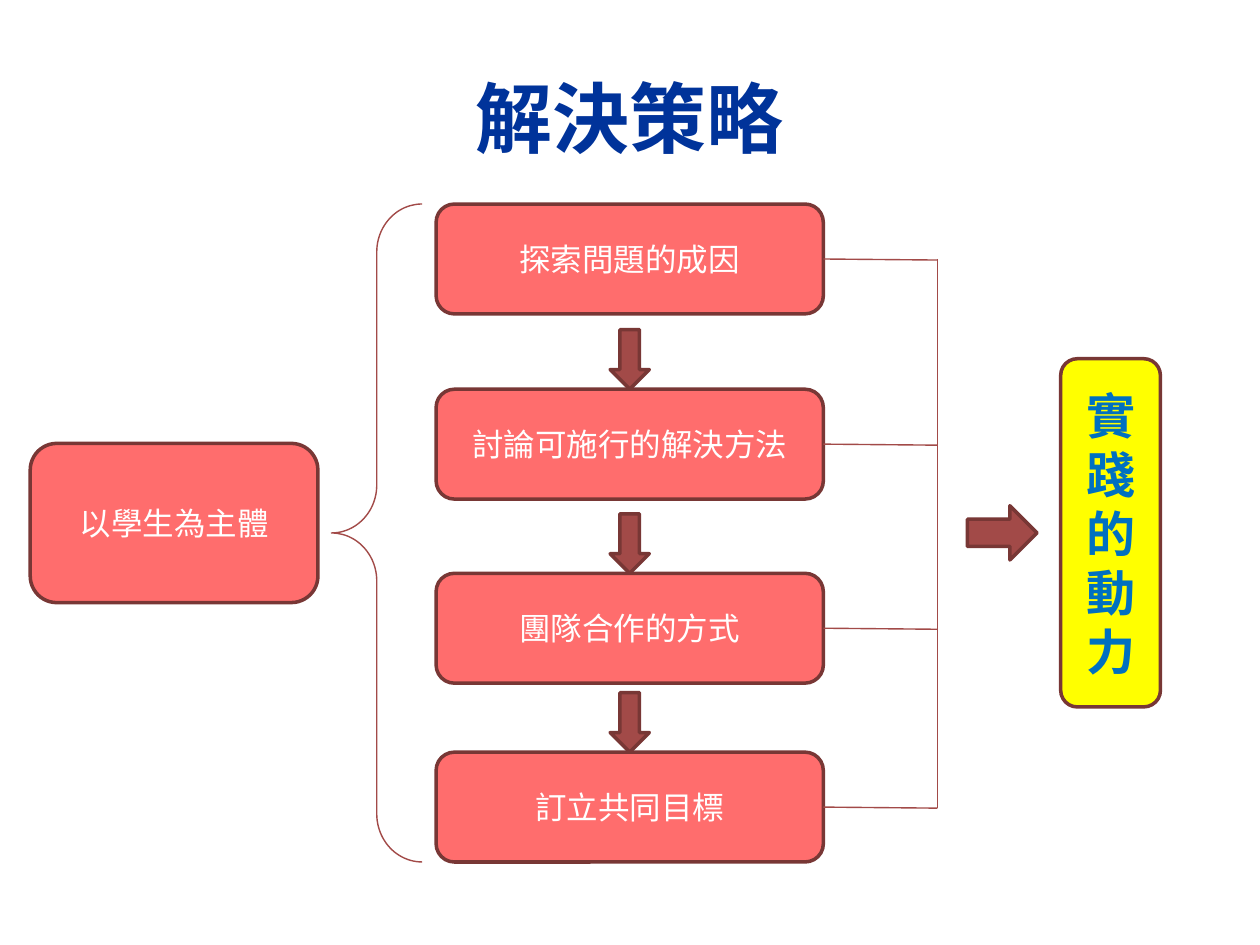
from lxml import etree
from pptx import Presentation
from pptx.dml.color import RGBColor
from pptx.enum.shapes import MSO_CONNECTOR, MSO_SHAPE
from pptx.enum.text import MSO_ANCHOR, PP_ALIGN
from pptx.oxml import parse_xml
from pptx.oxml.ns import nsdecls, qn
from pptx.util import Pt

ROUNDED = MSO_SHAPE.ROUNDED_RECTANGLE
BRACE = MSO_SHAPE.LEFT_BRACE
DOWN = MSO_SHAPE.DOWN_ARROW
RIGHT = MSO_SHAPE.RIGHT_ARROW
STRAIGHT = MSO_CONNECTOR.STRAIGHT
CENTER = PP_ALIGN.CENTER
MIDDLE = MSO_ANCHOR.MIDDLE

NAVY = RGBColor(0x00, 0x33, 0x9A)
CORAL = RGBColor(0xFF, 0x6D, 0x6D)
MAROON = RGBColor(0x78, 0x37, 0x35)
BRICK = RGBColor(0xA2, 0x4A, 0x48)
YELLOW = RGBColor(0xFF, 0xFF, 0x00)
BLUE = RGBColor(0x00, 0x70, 0xC0)
WHITE = RGBColor(0xFF, 0xFF, 0xFF)

HEADING_FONT = "Karla"
GOAL_FONT = "Arial"
THIN = 0.79
STEPS = ["探索問題的成因", "討論可施行的解決方法", "團隊合作的方式", "訂立共同目標"]
STEP_TOPS = [0, 105.8, 211, 313.2]
STEP_HEIGHT = 62.8


def write(frame, lines, font_name, size, color, bold=False):
    """Write centred lines, one paragraph each, in the middle of a frame."""
    frame.word_wrap = True
    frame.vertical_anchor = MIDDLE
    for index, line in enumerate(lines):
        paragraph = frame.paragraphs[0] if index == 0 else frame.add_paragraph()
        paragraph.alignment = CENTER
        run = paragraph.add_run()
        run.text = line
        run.font.name = font_name
        run.font.size = Pt(size)
        run.font.bold = bold
        run.font.color.rgb = color


def add_block(slide, preset, box, fill):
    """Add a filled preset shape with a maroon border."""
    block = slide.shapes.add_shape(preset, *map(Pt, box))
    block.shadow.inherit = False
    block.fill.solid()
    block.fill.fore_color.rgb = fill
    block.line.color.rgb = MAROON
    block.line.width = Pt(2)
    return block


def add_rule(slide, x1, y1, x2, y2):
    """Add a thin straight connector without shadow."""
    rule = slide.shapes.add_connector(STRAIGHT, Pt(x1), Pt(y1), Pt(x2), Pt(y2))
    rule.line.color.rgb = BRICK
    rule.line.width = Pt(THIN)
    etree.SubElement(rule._element.spPr, qn("a:effectLst"))


def add_title(slide, box, text):
    """Place the slide title with its faint outlined letters."""
    title = slide.shapes.title
    title.left, title.top, title.width, title.height = map(Pt, box)
    write(title.text_frame, [text], HEADING_FONT, 44, NAVY, True)
    outline = parse_xml(
        f'<a:ln {nsdecls("a")} w="1905"><a:solidFill>'
        '<a:srgbClr val="F2F2F2"/></a:solidFill></a:ln>'
    )
    title.text_frame.paragraphs[0].runs[0].font._element.insert(0, outline)


def add_label(slide, box, text):
    """Add a coral rounded box with a white label."""
    label = add_block(slide, ROUNDED, box, CORAL)
    write(label.text_frame, [text], HEADING_FONT, 18, WHITE)


def add_brace(slide, box):
    """Add the brace that opens towards the steps."""
    brace = slide.shapes.add_shape(BRACE, *map(Pt, box))
    brace.shadow.inherit = False
    brace.fill.background()
    brace.line.color.rgb = BRICK
    brace.line.width = Pt(THIN)
    brace.adjustments[0] = 0.53
    brace.adjustments[1] = 0.5


def add_steps(slide, box):
    """Stack the steps in a column with a down arrow before each later one."""
    left, top, width, _ = box
    arrow_width, arrow_height = 22.4, 34
    for text, offset in zip(STEPS, STEP_TOPS):
        add_label(slide, (left, top + offset, width, STEP_HEIGHT), text)
    for offset in STEP_TOPS[1:]:
        arrow_left = left + (width - arrow_width) / 2
        arrow_top = top + offset - arrow_height
        add_block(slide, DOWN, (arrow_left, arrow_top, arrow_width, arrow_height), BRICK)


def add_bracket(slide, box):
    """Join the middle of every step to one vertical line on the right."""
    left, top, width, _ = box
    right = left + width
    middles = [top + offset + STEP_HEIGHT / 2 for offset in STEP_TOPS]
    for middle in middles:
        add_rule(slide, left, middle, right, middle + 0.6)
    add_rule(slide, right, middles[0], right, middles[-1] + 0.6)


def add_goal(slide, box, text):
    """Add the right arrow and the yellow goal box with stacked characters."""
    left, top, width, height = box
    arrow_width, arrow_height, goal_width = 39.8, 31, 57
    arrow_top = top + (height - arrow_height) / 2
    add_block(slide, RIGHT, (left, arrow_top, arrow_width, arrow_height), BRICK)
    goal_box = (left + width - goal_width, top, goal_width, height)
    goal = add_block(slide, ROUNDED, goal_box, YELLOW)
    write(goal.text_frame, text, GOAL_FONT, 28, BLUE, True)


def main():
    """Build the strategy slide and save it."""
    deck = Presentation()
    deck.slide_width, deck.slide_height = Pt(720), Pt(540)
    slide = deck.slides.add_slide(deck.slide_layouts[5])
    add_title(slide, (36, 21.6, 648, 90), "解決策略")
    add_label(slide, (17.3, 253.4, 164.4, 91), "以學生為主體")
    add_steps(slide, (249.2, 116.6, 221.3, 376))
    add_brace(slide, (189.4, 116.6, 51.8, 376))
    add_bracket(slide, (470.5, 116.6, 65.2, 376))
    add_goal(slide, (552.8, 205, 110.3, 199), "實踐的動力")
    deck.save("out.pptx")


if __name__ == "__main__":
    main()
